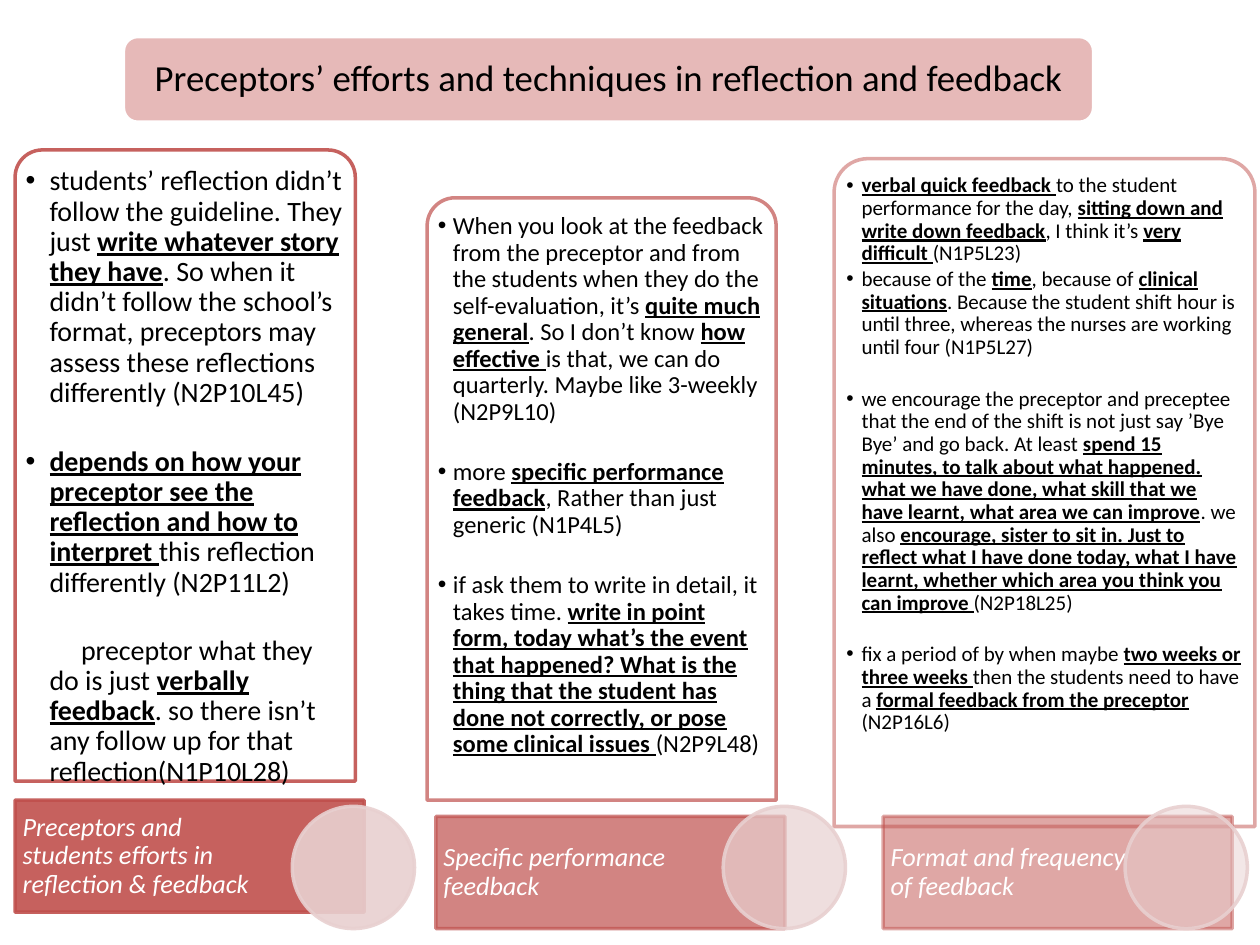
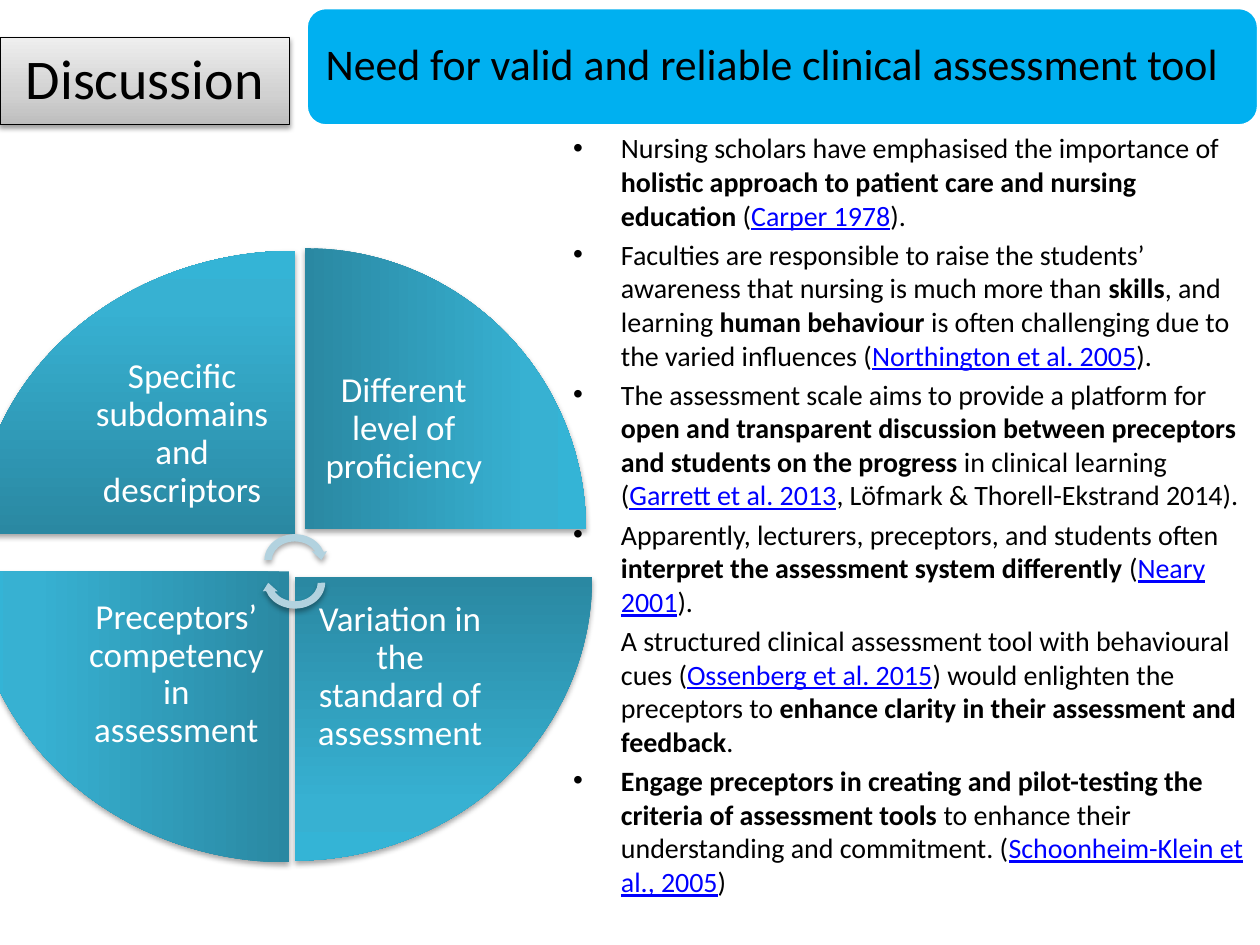
from lxml import etree
from pptx import Presentation
from pptx.dml.color import RGBColor
from pptx.enum.shapes import MSO_SHAPE
from pptx.enum.text import MSO_ANCHOR, PP_ALIGN
from pptx.oxml.ns import qn
from pptx.util import Inches, Pt

LEFT, CENTER = PP_ALIGN.LEFT, PP_ALIGN.CENTER
TOP, MIDDLE = MSO_ANCHOR.TOP, MSO_ANCHOR.MIDDLE
RECTANGLE, ROUNDED = MSO_SHAPE.RECTANGLE, MSO_SHAPE.ROUNDED_RECTANGLE
CARD, OVAL = MSO_SHAPE.ROUND_2_SAME_RECTANGLE, MSO_SHAPE.OVAL
WEDGE, CYCLE_ARROW = MSO_SHAPE.PIE_WEDGE, MSO_SHAPE.CIRCULAR_ARROW

FONT = "Calibri"
COLORS = {
    "black": "000000", "white": "FFFFFF", "red": "C0504D", "blush": "E8D0D0",
    "pink": "E6B9B8", "sky": "00B0F0", "link": "0000FF", "pale": "B2D2DF",
}
GRAY_STOPS = [(0, "BDBDBD"), (35, "D1D1D1"), (100, "EEEEEE")]
TEAL_STOPS = [(0, "2A88A2"), (80, "37B1D2"), (100, "34B4D6")]

STRONG = {"bold": True, "underline": True}
BOLD = {"bold": True}

COLUMNS = [
    {
        "card": (0.12, 1.19, 2.7, 5.01), "label": (0.12, 6.35), "circle": 2.32,
        "strength": 90, "size": 16, "indent": 0.19, "top": 0.07,
        "title": "Preceptors and students efforts in reflection & feedback",
        "quotes": [
            (False, "students’ reflection didn’t follow the guideline. They just *write whatever "
             "story they have*. So when it didn’t follow the school’s format, preceptors may "
             "assess these reflections differently (N2P10L45)"),
            (True, "*depends on how your preceptor see the reflection and how to interpret *"
             "this reflection differently (N2P11L2)"),
            (False, "\n\tpreceptor what they do is just *verbally feedback*. so there isn’t any "
             "follow up for that reflection(N1P10L28)"),
        ],
    },
    {
        "card": (3.39, 1.57, 2.77, 4.78), "label": (3.46, 6.48), "circle": 5.74,
        "strength": 70, "size": 14, "indent": 0.12, "top": 0.06,
        "title": "Specific performance feedback",
        "quotes": [
            (False, "When you look at the feedback from the preceptor and from the students when "
             "they do the self-evaluation, it’s *quite much general*. So I don’t know "
             "*how effective *is that, we can do quarterly. Maybe like 3-weekly (N2P9L10)"),
            (True, "more *specific performance feedback*, Rather than just generic (N1P4L5)"),
            (True, "if ask them to write in detail, it takes time. *write in point form, today "
             "what’s the event that happened? What is the thing that the student has done not "
             "correctly, or pose some clinical issues *(N2P9L48)"),
        ],
    },
    {
        "card": (6.62, 1.26, 3.34, 5.3), "label": (7.01, 6.48), "circle": 8.93,
        "strength": 50, "size": 12, "indent": 0.12, "top": 0.05,
        "title": "Format and frequency of feedback",
        "quotes": [
            (False, "*verbal quick feedback *to the student performance for the day, *sitting "
             "down and write down feedback*, I think it’s *very difficult *(N1P5L23)"),
            (False, "because of the *time*, because of *clinical situations*. Because the student "
             "shift hour is until three, whereas the nurses are working until four (N1P5L27)"),
            (True, "we encourage the preceptor and preceptee that the end of the shift is not "
             "just say ’Bye Bye’ and go back. At least *spend 15 minutes, to talk about what "
             "happened. what we have done, what skill that we have learnt, what area we can "
             "improve*. we also *encourage, sister to sit in. Just to reflect what I have done "
             "today, what I have learnt, whether which area you think you can improve *"
             "(N2P18L25)"),
            (True, "fix a period of by when maybe *two weeks or three weeks *then the students "
             "need to have a *formal feedback from the preceptor *(N2P16L6)"),
        ],
    },
]

FINDINGS = [
    "Nursing scholars have emphasised the importance of *holistic approach to patient care and "
    "nursing education* (|Carper 1978|).",
    "Faculties are responsible to raise the students’ awareness that nursing is much more than "
    "*skills*, and learning *human behaviour *is often challenging due to the varied influences "
    "(|Northington et al. 2005|).",
    "The assessment scale aims to provide a platform for *open and transparent discussion between "
    "preceptors and students on the progress* in clinical learning (|Garrett et al. 2013|, "
    "Löfmark & Thorell-Ekstrand 2014).",
    "Apparently, lecturers, preceptors, and students often *interpret the assessment system "
    "differently* (|Neary 2001|).",
    "A structured clinical assessment tool with behavioural cues (|Ossenberg et al. 2015|) would "
    "enlighten the preceptors to *enhance clarity in their assessment and feedback*.",
    "*Engage preceptors in creating and pilot-testing the criteria of assessment tools *to enhance "
    "their understanding and commitment. (|Schoonheim-Klein et al., 2005|)",
]

WEDGES = [
    ((-0.19, 1.99, 2.53, 2.25), 0, (0.55, 2.65, 1.79, 1.59),
     "Specific subdomains and descriptors"),
    ((2.42, 1.97, 2.23, 2.23), 90, (2.42, 2.62, 1.57, 1.57), "Different level of proficiency"),
    ((2.34, 4.58, 2.36, 2.25), 180, (2.34, 4.58, 1.67, 1.59),
     "Variation in the standard of assessment"),
    ((-0.12, 4.43, 2.31, 2.52), 270, (0.51, 4.54, 1.78, 1.63),
     "Preceptors’ competency in assessment"),
]


def add_child(parent, tag, **attributes):
    """Append a DrawingML element and return it."""
    child = etree.SubElement(parent, qn(tag))
    for name, value in attributes.items():
        child.set(name, str(value))
    return child


def paint(fill, color, opacity=100):
    """Give a fill one colour and an opacity in percent."""
    fill.solid()
    fill.fore_color.rgb = RGBColor.from_string(COLORS[color])
    if opacity < 100:
        color_node = fill._xPr.find(qn("a:solidFill"))[0]
        add_child(color_node, "a:alpha", val=opacity * 1000)


def paint_gradient(fill, stops):
    """Give a fill a vertical gradient that starts at the bottom."""
    fill.gradient()
    fill.gradient_angle = 90
    stop_list = fill._xPr.find(qn("a:gradFill")).find(qn("a:gsLst"))
    for stop in list(stop_list):
        stop_list.remove(stop)
    for position, color in stops:
        stop = add_child(stop_list, "a:gs", pos=position * 1000)
        add_child(stop, "a:srgbClr", val=color)


def add_shape(page, kind, box, fill, opacity=100, line=None, line_opacity=100, width=2):
    """Add a preset shape; fill is a colour name or a list of gradient stops."""
    shape = page.shapes.add_shape(kind, *map(Inches, box))
    shape.shadow.inherit = False
    if isinstance(fill, str):
        paint(shape.fill, fill, opacity)
    else:
        paint_gradient(shape.fill, fill)
    if line:
        shape.line.width = Pt(width)
        paint(shape.line.fill, line, line_opacity)
    else:
        shape.line.fill.background()
    return shape


def cast_shadow(shape, opacity, distance):
    """Put a soft shadow below a shape."""
    effects = shape._element.spPr.find(qn("a:effectLst"))
    shadow = add_child(effects, "a:outerShdw", blurRad=Pt(3.1), dist=Pt(distance),
                       dir=5400000, rotWithShape=0)
    color = add_child(shadow, "a:srgbClr", val=COLORS["black"])
    add_child(color, "a:alpha", val=opacity * 1000)


def prepare_frame(shape, margins, anchor=MIDDLE):
    """Set wrapping, anchor and margins (left, top, right, bottom)."""
    frame = shape.text_frame
    sides = ("margin_left", "margin_top", "margin_right", "margin_bottom")
    settings = {"word_wrap": True, "vertical_anchor": anchor,
                **dict(zip(sides, map(Inches, margins)))}
    for name, value in settings.items():
        setattr(frame, name, value)
    return frame


def add_span(para, text, size, color="black", **formats):
    """Add one run of text."""
    span = para.add_run()
    span.text = text
    for name, value in {"name": FONT, "size": Pt(size), **formats}.items():
        setattr(span.font, name, value)
    span.font.color.rgb = RGBColor.from_string(COLORS[color])


def write_label(shape, text, size, margins, color="black", align=CENTER, **formats):
    """Write one paragraph into a shape."""
    para = prepare_frame(shape, margins).paragraphs[0]
    para.alignment = align
    para.line_spacing = 0.9
    add_span(para, text, size, color, **formats)


def write_marked(para, text, size, emphasis):
    """Write text in which *...* is emphasised and |...| is a citation."""
    if text.startswith("\n"):
        para.add_line_break()
        text = text[1:]
    for index, chunk in enumerate(text.split("*")):
        for part, piece in enumerate(chunk.split("|")):
            if piece and part % 2:
                add_span(para, piece, size, "link", underline=True)
            elif piece:
                add_span(para, piece, size, **(emphasis if index % 2 else {}))


def write_bullets(frame, items, size, indent, emphasis, after=0, spacing=1.0):
    """Write bulleted paragraphs from pairs of space before and text."""
    for index, (before, text) in enumerate(items):
        para = frame.add_paragraph() if index else frame.paragraphs[0]
        formats = {"alignment": LEFT, "line_spacing": spacing,
                   "space_before": Pt(before), "space_after": Pt(after)}
        for name, value in formats.items():
            setattr(para, name, value)
        properties = para._p.get_or_add_pPr()
        properties.set("marL", str(Inches(indent)))
        properties.set("indent", str(-Inches(indent)))
        add_child(properties, "a:buFont", typeface="Arial")
        add_child(properties, "a:buChar", char="•")
        if "\t" in text:
            tabs = add_child(properties, "a:tabLst")
            add_child(tabs, "a:tab", pos=Inches(0.44), algn="l")
        write_marked(para, text, size, emphasis)


def add_band(page, box, fill, text, size, margins):
    """Add the rounded title band of a slide."""
    band = add_shape(page, ROUNDED, box, fill, line="white")
    write_label(band, text, size, margins)


def add_column(page, column):
    """Add a card of quotes with its label and circle."""
    strength, size = column["strength"], column["size"]
    card = add_shape(page, CARD, column["card"], "white", 90, "red", strength)
    card.adjustments[0] = 0.08
    frame = prepare_frame(card, (0.02, column["top"], 0.02, 0.02), TOP)
    items = [(size * 1.24 if gap else 0, text) for gap, text in column["quotes"]]
    write_bullets(frame, items, size, column["indent"], STRONG, size * 0.14, 0.9)
    label = add_shape(page, RECTANGLE, (*column["label"], 2.77, 0.89), "red", strength,
                      "red", strength)
    write_label(label, column["title"], 15, (0.06, 0, 0.84, 0), "white", LEFT, italic=True)
    add_shape(page, OVAL, (column["circle"], 6.4, 0.97, 0.97), "blush", strength, "blush", 90)


def add_cycle(page):
    """Add the four wedges and the two arrows between them."""
    for box, turn, text_box, text in WEDGES:
        wedge = add_shape(page, WEDGE, box, TEAL_STOPS)
        wedge.rotation = turn
        cast_shadow(wedge, 35, 1.8)
        label = page.shapes.add_textbox(*map(Inches, text_box))
        write_label(label, text, 20, (0.16,) * 4, "white")
    for top, turn in ((4.21, 0), (4.39, 180)):
        arrow = add_shape(page, CYCLE_ARROW, (2.07, top, 0.54, 0.47), "pale")
        arrow.rotation = turn
        cast_shadow(arrow, 35, 1.8)


def build_techniques(page):
    """Build the slide on reflection and feedback."""
    for column in COLUMNS:
        add_column(page, column)
    add_band(page, (0.98, 0.29, 7.7, 0.68), "pink",
             "Preceptors’ efforts and techniques in reflection and feedback", 21, (0.09,) * 4)


def build_discussion(page):
    """Build the discussion slide."""
    body = page.shapes.add_textbox(*map(Inches, (4.45, 0.99, 5.55, 6.51)))
    frame = prepare_frame(body, (0.1, 0.05, 0.1, 0.05), TOP)
    write_bullets(frame, [(3.2, text) for text in FINDINGS], 16, 0.38, BOLD)
    add_band(page, (2.43, 0.06, 7.56, 0.94), "sky",
             "Need for valid and reliable clinical assessment tool", 25, (0.1, 0.1, 0.27, 0.1))
    tag = add_shape(page, RECTANGLE, (0, 0.3, 2.3, 0.69), GRAY_STOPS, line="black", width=0.75)
    cast_shadow(tag, 38, 1.6)
    write_label(tag, "Discussion", 32, (0.1, 0.05, 0.1, 0.05))
    add_cycle(page)


def main():
    """Build the deck."""
    deck = Presentation()
    deck.slide_width, deck.slide_height = Inches(10), Inches(7.5)
    for build in (build_techniques, build_discussion):
        build(deck.slides.add_slide(deck.slide_layouts[6]))
    deck.save("out.pptx")


if __name__ == "__main__":
    main()
